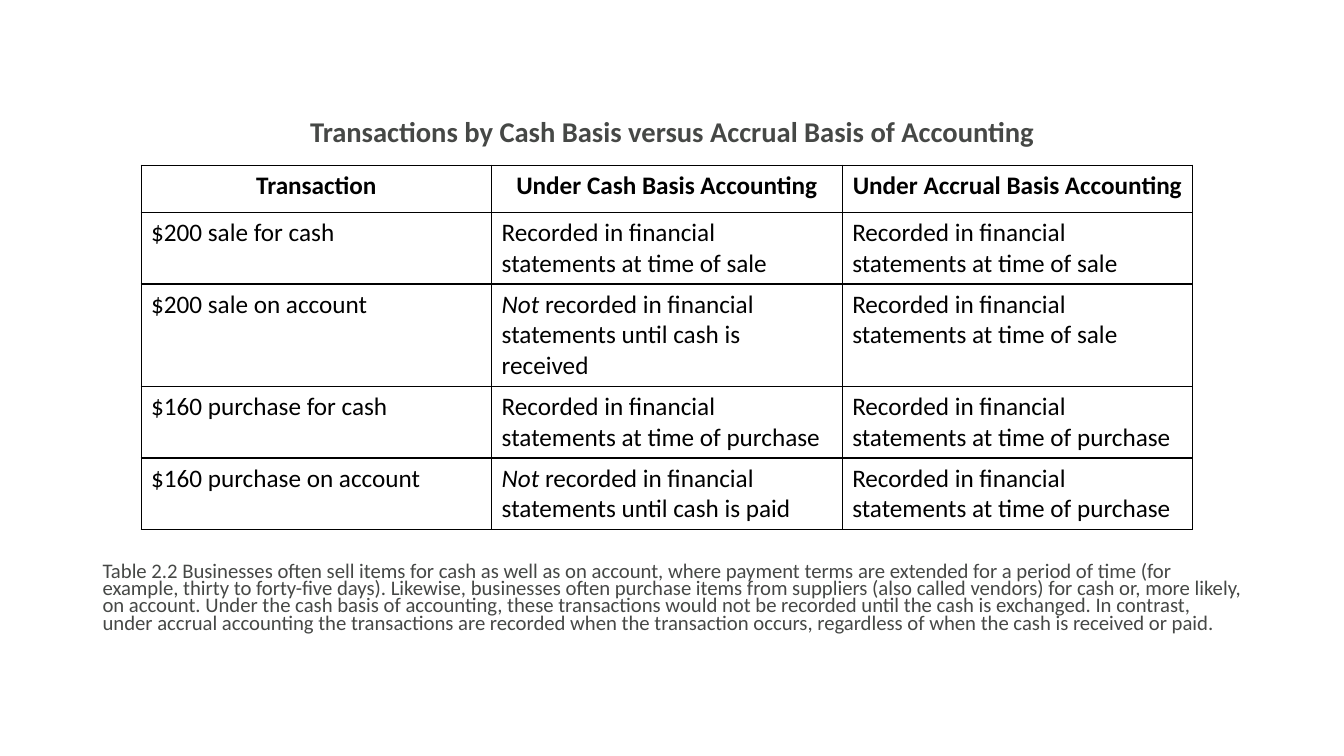
from lxml import etree
from pptx import Presentation
from pptx.dml.color import RGBColor
from pptx.enum.text import PP_ALIGN
from pptx.oxml.ns import qn
from pptx.util import Pt

LEFT, CENTER = PP_ALIGN.LEFT, PP_ALIGN.CENTER
BLACK = RGBColor(0, 0, 0)
GRAY = RGBColor(0x46, 0x48, 0x46)

TITLE = "Transactions by Cash Basis versus Accrual Basis of Accounting"
NOTE = (
    "Table 2.2 Businesses often sell items for cash as well as on account, "
    "where payment terms are extended for a period of time (for example, "
    "thirty to forty-five days). Likewise, businesses often purchase items "
    "from suppliers (also called vendors) for cash or, more likely, on "
    "account. Under the cash basis of accounting, these transactions would "
    "not be recorded until the cash is exchanged. In contrast, under accrual "
    "accounting the transactions are recorded when the transaction occurs, "
    "regardless of when the cash is received or paid."
)
SALE = "Recorded in financial statements at time of sale"
BUY = "Recorded in financial statements at time of purchase"
NOT = "Not"
UNTIL = " recorded in financial statements until cash is "
ROWS = [
    ("Transaction", "Under Cash Basis Accounting", "Under Accrual Basis Accounting"),
    ("$200 sale for cash", SALE, SALE),
    ("$200 sale on account", NOT + UNTIL + "received", SALE),
    ("$160 purchase for cash", BUY, BUY),
    ("$160 purchase on account", NOT + UNTIL + "paid", BUY),
]
TALL = [33.6, 51.2, 73.1, 51.2, 51.2]

HEAD = {"name": "Calibri", "size": Pt(20.4), "bold": True}
BODY = {"name": "Calibri", "size": Pt(14.8), "bold": False}
CELL = {"name": "Calibri", "size": Pt(18)}


def add_run(para, text, color, form):
    run = para.add_run()
    run.text = text
    for key, value in form.items():
        setattr(run.font, key, value)
    run.font.color.rgb = color


def add_text(slide, box, text, align, form):
    frame = slide.shapes.add_textbox(*map(Pt, box)).text_frame
    frame.word_wrap = True
    para = frame.paragraphs[0]
    para.alignment = align
    para.line_spacing = 0.7
    add_run(para, text, GRAY, form)


def add_edges(cell):
    props = cell._tc.get_or_add_tcPr()
    for spot, side in enumerate(("lnL", "lnR", "lnT", "lnB")):
        line = etree.Element(qn("a:" + side), w=str(Pt(1)))
        fill = etree.SubElement(line, qn("a:solidFill"))
        etree.SubElement(fill, qn("a:srgbClr"), val=str(BLACK))
        props.insert(spot, line)


def fill_cell(cell, text, head):
    cell.fill.background()
    add_edges(cell)
    para = cell.text_frame.paragraphs[0]
    para.alignment = CENTER if head else LEFT
    form = {**CELL, "bold": head}
    if text.startswith(NOT):
        add_run(para, NOT, BLACK, {**form, "italic": True})
        text = text[len(NOT):]
    add_run(para, text, BLACK, form)


def add_grid(slide, box):
    left, top, width = box
    count = len(ROWS[0])
    area = map(Pt, (left, top, width, sum(TALL)))
    table = slide.shapes.add_table(len(ROWS), count, *area).table
    for flag in ("first_row", "horz_banding"):
        setattr(table, flag, False)
    for col in table.columns:
        col.width = Pt(width / count)
    for i, texts in enumerate(ROWS):
        table.rows[i].height = Pt(TALL[i])
        for j, text in enumerate(texts):
            fill_cell(table.cell(i, j), text, i == 0)


def add_page(deck, box):
    left, top, width = box
    slide = deck.slides.add_slide(deck.slide_layouts[6])
    add_text(slide, (left, top, width, 26), TITLE, CENTER, HEAD)
    add_grid(slide, (left + 34.6, top + 33.9, 751.2))
    add_text(slide, (left, top + 315.2, width, 60), NOTE, LEFT, BODY)


def main():
    deck = Presentation()
    deck.slide_width, deck.slide_height = Pt(960), Pt(540)
    add_page(deck, (66.2, 84.2, 828))
    deck.save("out.pptx")


if __name__ == "__main__":
    main()
